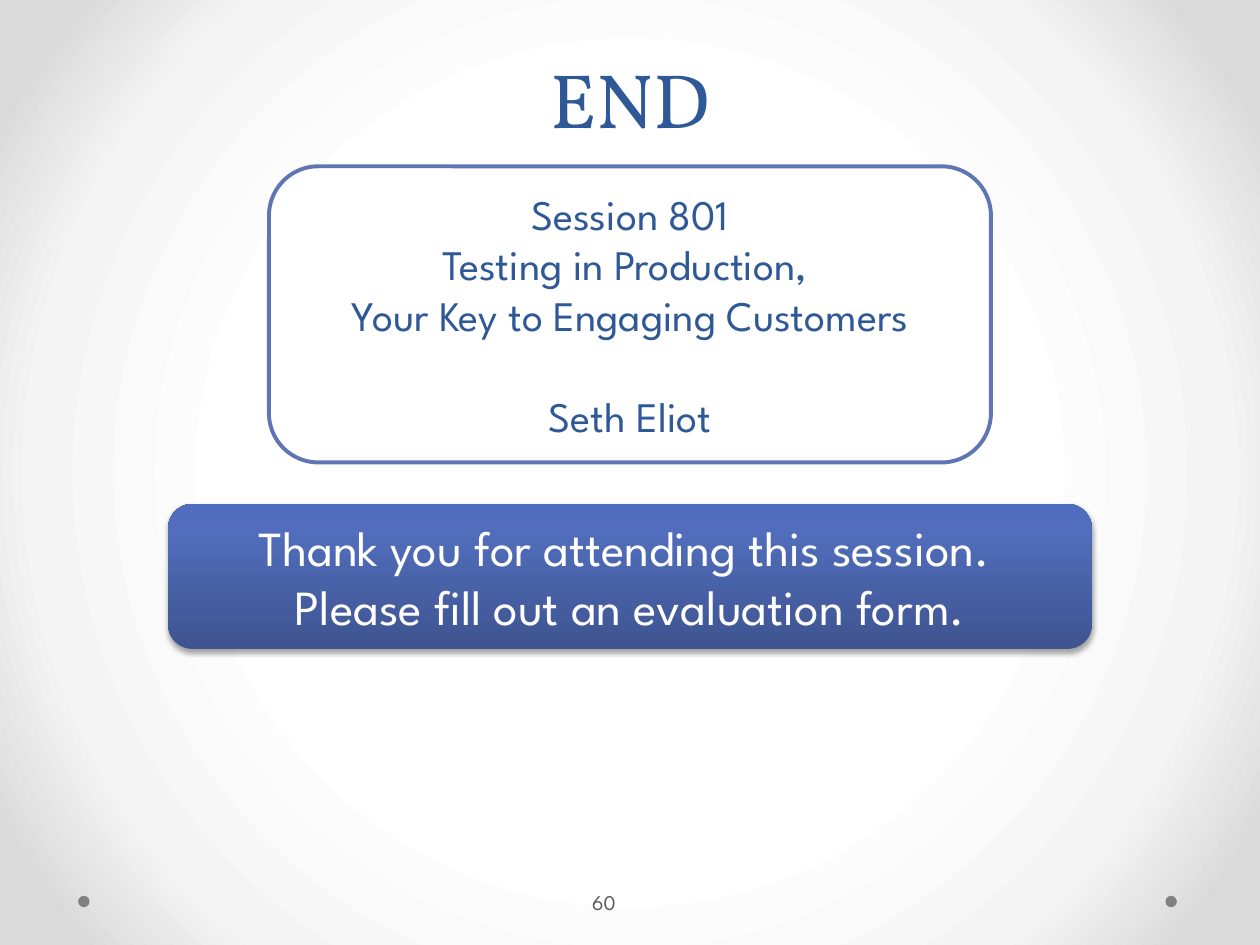
from dataclasses import dataclass

from lxml.etree import SubElement
from pptx import Presentation
from pptx.dml.color import RGBColor
from pptx.enum.shapes import MSO_SHAPE
from pptx.enum.text import MSO_ANCHOR, PP_ALIGN
from pptx.oxml import parse_xml
from pptx.oxml.ns import nsdecls, qn
from pptx.util import Inches, Pt


@dataclass(frozen=True)
class Theme:
    """Colours, fonts and type sizes of the slide."""
    navy: str = "2F5897"
    outline: str = "6076B4"
    white: str = "FFFFFF"
    dot: str = "808080"
    muted: str = "595959"
    backdrop: tuple = ((0, "FFFFFF"), (50, "FFFFFF"), (76, "F4F4F4"), (92, "DADADA"), (100, "DADADA"))
    banner: tuple = ((0, "3E5490"), (80, "516DBB"), (100, "4F6CBE"))
    heading: str = "Vollkorn"
    body: str = "League Spartan"
    title_size: int = 44
    thanks_size: int = 28
    card_size: int = 24
    number_size: int = 12


THEME = Theme()
COLS, ROWS = 40, 30
CELL = 0.25
UPWARD = '<a:lin ang="16200000" scaled="0"/>'
RADIAL = '<a:path path="circle"><a:fillToRect l="50000" t="50000" r="50000" b="50000"/></a:path>'


def grid(*cells):
    """Turn counts of grid cells into lengths."""
    return [Inches(n * CELL) for n in cells]


def centred(top, cols, rows):
    """Return the box of a block in the middle of the columns."""
    return grid((COLS - cols) / 2, top, cols, rows)


def gradient(stops, direction):
    """Build a gradient fill element."""
    gs = "".join(f'<a:gs pos="{pos * 1000}"><a:srgbClr val="{c}"/></a:gs>' for pos, c in stops)
    return parse_xml(f'<a:gradFill {nsdecls("a")} rotWithShape="1"><a:gsLst>{gs}</a:gsLst>{direction}</a:gradFill>')


def set_gradient(parent, fill, stops, direction):
    """Put a gradient in place of the fill under parent."""
    fill.gradient()
    old = parent.find(qn("a:gradFill"))
    parent.replace(old, gradient(stops, direction))


def write(tf, lines, font, size, color, align=PP_ALIGN.CENTER):
    """Write one paragraph per line in one text style."""
    tf.text = "\n".join(lines)
    for p in tf.paragraphs:
        p.alignment = align
        for r in p.runs:
            r.font.name, r.font.size = font, Pt(size)
            r.font.color.rgb = RGBColor.from_string(color)


def add_block(s, kind, box, fill=None):
    """Add a flat preset shape without outline."""
    sp = s.shapes.add_shape(kind, *box)
    sp.shadow.inherit = False
    sp.line.fill.background()
    if fill:
        sp.fill.solid()
        sp.fill.fore_color.rgb = RGBColor.from_string(fill)
    return sp


def add_panel(s, box, lines, size, color, fill=None):
    """Add a rounded panel with centred lines."""
    sp = add_block(s, MSO_SHAPE.ROUNDED_RECTANGLE, box, fill)
    tf = sp.text_frame
    tf.word_wrap = False
    tf.vertical_anchor = MSO_ANCHOR.MIDDLE
    write(tf, lines, THEME.body, size, color)
    return sp


def add_card(s):
    """Add the outlined session card."""
    lines = ["Session 801", "Testing in Production, ", "Your Key to Engaging Customers", "Seth Eliot"]
    sp = add_panel(s, centred(5.28, 22.92, 9.4), lines, THEME.card_size, THEME.navy, THEME.white)
    sp.line.color.rgb = RGBColor.from_string(THEME.outline)
    sp.line.width = Pt(2.25)
    sp.text_frame.paragraphs[-1].space_before = Pt(29)


def add_banner(s):
    """Add the shaded thank-you banner with its shadow."""
    lines = [" Thank you for attending this session.  ", "Please fill out an evaluation form."]
    sp = add_panel(s, centred(16, 29.32, 4.6), lines, THEME.thanks_size, THEME.white)
    pr = sp.fill._xPr
    set_gradient(pr, sp.fill, THEME.banner, UPWARD)
    shadow = SubElement(pr.find(qn("a:effectLst")), qn("a:outerShdw"), blurRad=str(Pt(3.1)),
                        dist=str(Pt(1.8)), dir="5400000", algn="ctr", rotWithShape="0")
    black = SubElement(shadow, qn("a:srgbClr"), val="000000")
    SubElement(black, qn("a:alpha"), val="35000")


def add_title(s):
    """Place and format the title."""
    sp = s.shapes.title
    sp.left, sp.top, sp.width, sp.height = centred(0, 36, 4.76)
    tf = sp.text_frame
    tf.vertical_anchor = MSO_ANCHOR.BOTTOM
    write(tf, ["END"], THEME.heading, THEME.title_size, THEME.navy)
    tf.paragraphs[0].line_spacing = Pt(58)


def add_footer(s):
    """Add the two footer dots and the page number."""
    for left in (37, 2.48):
        add_block(s, MSO_SHAPE.OVAL, grid(left, 28.44, 0.36, 0.36), THEME.dot)
    tf = s.shapes.add_textbox(*grid(18.68, 27.84, 2.44, 1.6)).text_frame
    tf.word_wrap = True
    tf.vertical_anchor = MSO_ANCHOR.MIDDLE
    tf.margin_left, tf.margin_right = Inches(0.03), Inches(0.05)
    write(tf, ["60"], THEME.body, THEME.number_size, THEME.muted, PP_ALIGN.LEFT)


def main():
    """Build and save the closing slide."""
    prs = Presentation()
    prs.slide_width, prs.slide_height = grid(COLS, ROWS)
    s = prs.slides.add_slide(prs.slide_layouts[5])
    fill = s.background.fill
    set_gradient(fill._xPr, fill, THEME.backdrop, RADIAL)
    add_footer(s)
    add_title(s)
    add_card(s)
    add_banner(s)
    prs.save("out.pptx")


if __name__ == "__main__":
    main()
